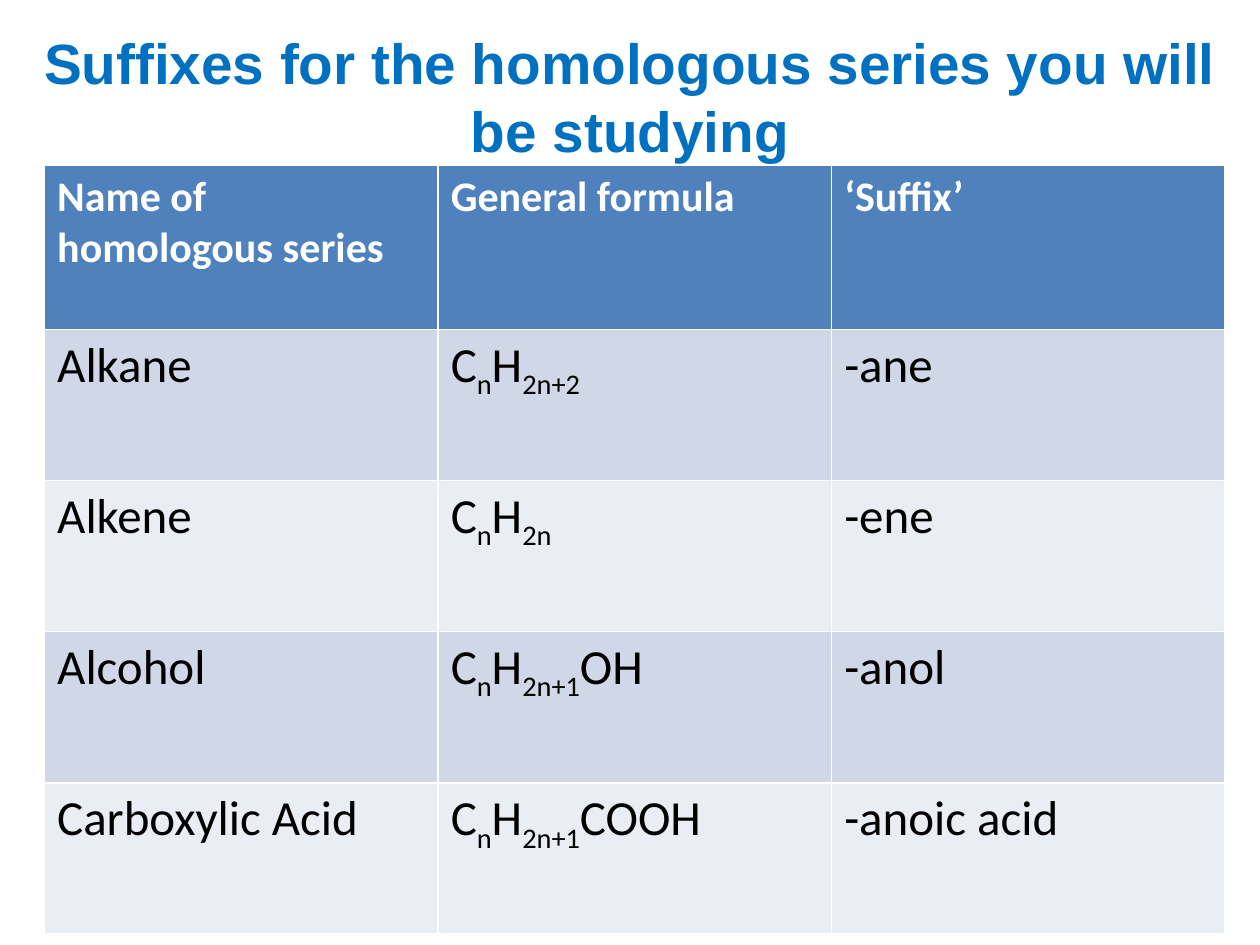
from pptx import Presentation
from pptx.dml.color import RGBColor
from pptx.enum import text as t
from pptx.util import Cm, Pt

HEAD = ["Name of homologous series", "General formula", "‘Suffix’"]
# Underscores switch between normal and subscript text.
SERIES = [
    ["Alkane", "C_n_H_2n+2", "-ane"],
    ["Alkene", "C_n_H_2n", "-ene"],
    ["Alcohol", "C_n_H_2n+1_OH", "-anol"],
    ["Carboxylic Acid", "C_n_H_2n+1_COOH", "-anoic acid"],
]
BANDS = ["D0D8E8", "E9EDF4"]


def paint(target, color):
    target.fill.solid()
    target.fill.fore_color.rgb = RGBColor.from_string(color)


def write(frame, words, size=28, font="Calibri", color="000000",
          bold=False, align=t.PP_ALIGN.LEFT):
    """Fill a text frame; every second part between underscores is subscript."""
    para = frame.paragraphs[0]
    para.alignment = align
    for i, part in enumerate(words.split("_")):
        run = para.add_run()
        run.text = part
        run.font.size = Pt(size)
        run.font.name = font
        run.font.bold = bold
        paint(run.font, color)
        if i % 2:
            run._r.get_or_add_rPr().set("baseline", "-25000")


def add_title(slide, left, top, width, height):
    box = slide.shapes.add_textbox(Cm(left), Cm(top), Cm(width), Cm(height))
    frame = box.text_frame
    frame.word_wrap = True
    frame.vertical_anchor = t.MSO_ANCHOR.MIDDLE
    write(frame, "Suffixes for the homologous series you will be studying",
          size=32.4, font="Arial", color="0070C0", bold=True,
          align=t.PP_ALIGN.CENTER)


def add_series(slide, left, top, width, height, head=3.31):
    rows = [HEAD] + SERIES
    table = slide.shapes.add_table(
        len(rows), len(HEAD), Cm(left), Cm(top), Cm(width), Cm(height)).table
    for col in table.columns:
        col.width = Cm(width / len(HEAD))
    for r, row in enumerate(rows):
        table.rows[r].height = Cm(
            (height - head) / len(SERIES) if r else head)
        for c, words in enumerate(row):
            cell = table.cell(r, c)
            if r:
                paint(cell, BANDS[(r - 1) % 2])
                write(cell.text_frame, words)
            else:
                paint(cell, "4F81BD")
                write(cell.text_frame, words, size=24, color="FFFFFF",
                      bold=True)


def main():
    deck = Presentation()
    deck.slide_width, deck.slide_height = Cm(25.4), Cm(19.05)
    slide = deck.slides.add_slide(deck.slide_layouts[6])
    add_title(slide, 0.3, 0.33, 24.8, 3.2)
    add_series(slide, 0.9, 3.33, 23.8, 15.5)
    deck.save("out.pptx")


if __name__ == "__main__":
    main()
